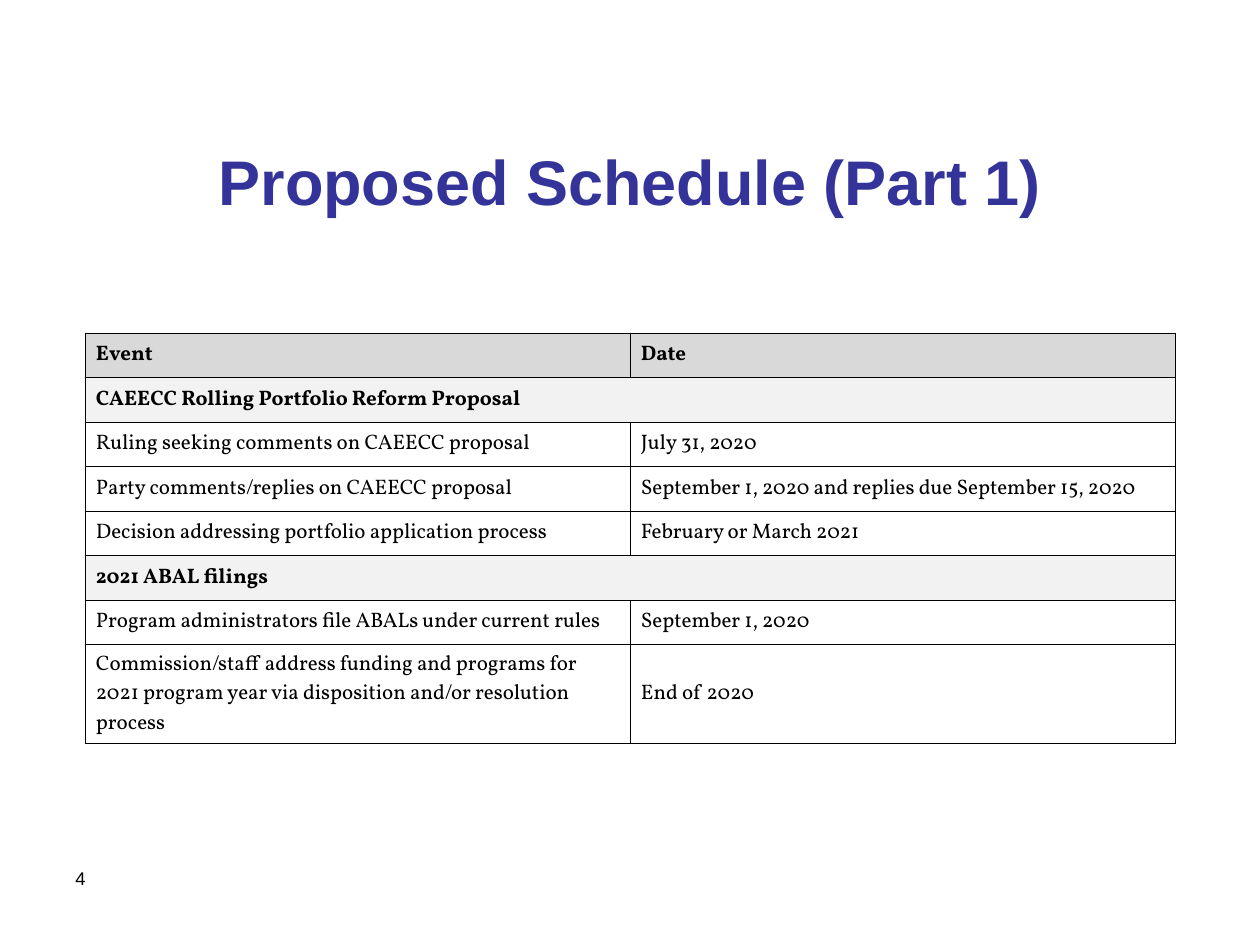
import pptx
import pptx.util
import pptx.dml.color
import pptx.enum.text
import pptx.oxml
import pptx.oxml.ns

TITLE = "Proposed Schedule (Part 1)"
PAGE_NUMBER = "4"
HEADER = ("Event", "Date")
SECTIONS = [
    ("CAEECC Rolling Portfolio Reform Proposal", [
        ("Ruling seeking comments on CAEECC proposal", "July 31, 2020"),
        ("Party comments/replies on CAEECC proposal",
         "September 1, 2020 and replies due September 15, 2020"),
        ("Decision addressing portfolio application process", "February or March 2021"),
    ]),
    ("2021 ABAL filings", [
        ("Program administrators file ABALs under current rules", "September 1, 2020"),
        ("Commission/staff address funding and programs for 2021 program year "
         "via disposition and/or resolution process", "End of 2020"),
    ]),
]

THEME = {
    "title": {"name": "Arial", "size": 36, "bold": True, "color": "333399"},
    "number": {"name": "Arial", "size": 10.5, "bold": False, "color": "000000"},
    "strong": {"name": "Vollkorn", "size": 12, "bold": True, "color": "000000"},
    "body": {"name": "Vollkorn", "size": 12, "bold": False, "color": "000000"},
    "header_fill": "D9D9D9",
    "section_fill": "F2F2F2",
    "border": "000000",
    "border_width": 0.48,
}

PX = 914400 / 126
SLIDE_SIZE = (1260, 945)
TITLE_BOX = (63, 112, 1134, 136)
NUMBER_BOX = (63, 861, 231, 66)
TABLE_LEFT, TABLE_TOP, TABLE_WIDTH = 85, 333, 1090
SINGLE_ROWS_HEIGHT, LAST_ROW_HEIGHT = 312, 99


def emu(px):
    return pptx.util.Emu(round(px * PX))


def color(value):
    return pptx.dml.color.RGBColor.from_string(value)


def write(frame, text, style):
    frame.word_wrap = True
    paragraph = frame.paragraphs[0]
    run = paragraph.add_run()
    run.text = text
    values = {**THEME[style], "size": pptx.util.Pt(THEME[style]["size"])}
    run.font.color.rgb = color(values.pop("color"))
    for name, value in values.items():
        setattr(run.font, name, value)
    return paragraph


def add_borders(cell):
    properties = cell._tc.get_or_add_tcPr()
    width = pptx.util.Pt(THEME["border_width"])
    for side in "LRTB":
        properties.append(pptx.oxml.parse_xml(
            f'<a:ln{side} {pptx.oxml.ns.nsdecls("a")} w="{width}"><a:solidFill>'
            f'<a:srgbClr val="{THEME["border"]}"/></a:solidFill></a:ln{side}>'))


def format_cell(cell, fill):
    margins = {"margin_left": 11, "margin_right": 11, "margin_top": 6, "margin_bottom": 6}
    for name, value in margins.items():
        setattr(cell, name, emu(value))
    cell.vertical_anchor = pptx.enum.text.MSO_ANCHOR.MIDDLE
    add_borders(cell)
    if fill:
        cell.fill.solid()
        cell.fill.fore_color.rgb = color(fill)
    else:
        cell.fill.background()


def add_title(slide):
    title = slide.shapes.title
    for name, value in zip(("left", "top", "width", "height"), TITLE_BOX):
        setattr(title, name, emu(value))
    title.text_frame.vertical_anchor = pptx.enum.text.MSO_ANCHOR.MIDDLE
    paragraph = write(title.text_frame, TITLE, "title")
    paragraph.alignment = pptx.enum.text.PP_ALIGN.CENTER


def add_schedule(slide):
    rows = [(HEADER, "strong", THEME["header_fill"])]
    for heading, events in SECTIONS:
        rows.append(((heading,), "strong", THEME["section_fill"]))
        rows.extend((event, "body", None) for event in events)
    heights = [SINGLE_ROWS_HEIGHT / (len(rows) - 1)] * (len(rows) - 1) + [LAST_ROW_HEIGHT]

    table = slide.shapes.add_table(
        len(rows), len(HEADER), emu(TABLE_LEFT), emu(TABLE_TOP),
        emu(TABLE_WIDTH), emu(sum(heights))).table
    table.first_row = table.horz_banding = False
    for column in table.columns:
        column.width = emu(TABLE_WIDTH / len(HEADER))
    for index, ((texts, style, fill), height) in enumerate(zip(rows, heights)):
        table.rows[index].height = emu(height)
        cells = [table.cell(index, column) for column in range(len(HEADER))]
        for cell in cells:
            format_cell(cell, fill)
        if len(texts) == 1:
            cells[0].merge(cells[-1])
        for cell, text in zip(cells, texts):
            write(cell.text_frame, text, style)


def main():
    presentation = pptx.Presentation()
    presentation.slide_width, presentation.slide_height = map(emu, SLIDE_SIZE)
    slide = presentation.slides.add_slide(presentation.slide_layouts[5])
    add_title(slide)
    number = slide.shapes.add_textbox(*map(emu, NUMBER_BOX))
    write(number.text_frame, PAGE_NUMBER, "number")
    add_schedule(slide)
    presentation.save("out.pptx")


if __name__ == "__main__":
    main()
